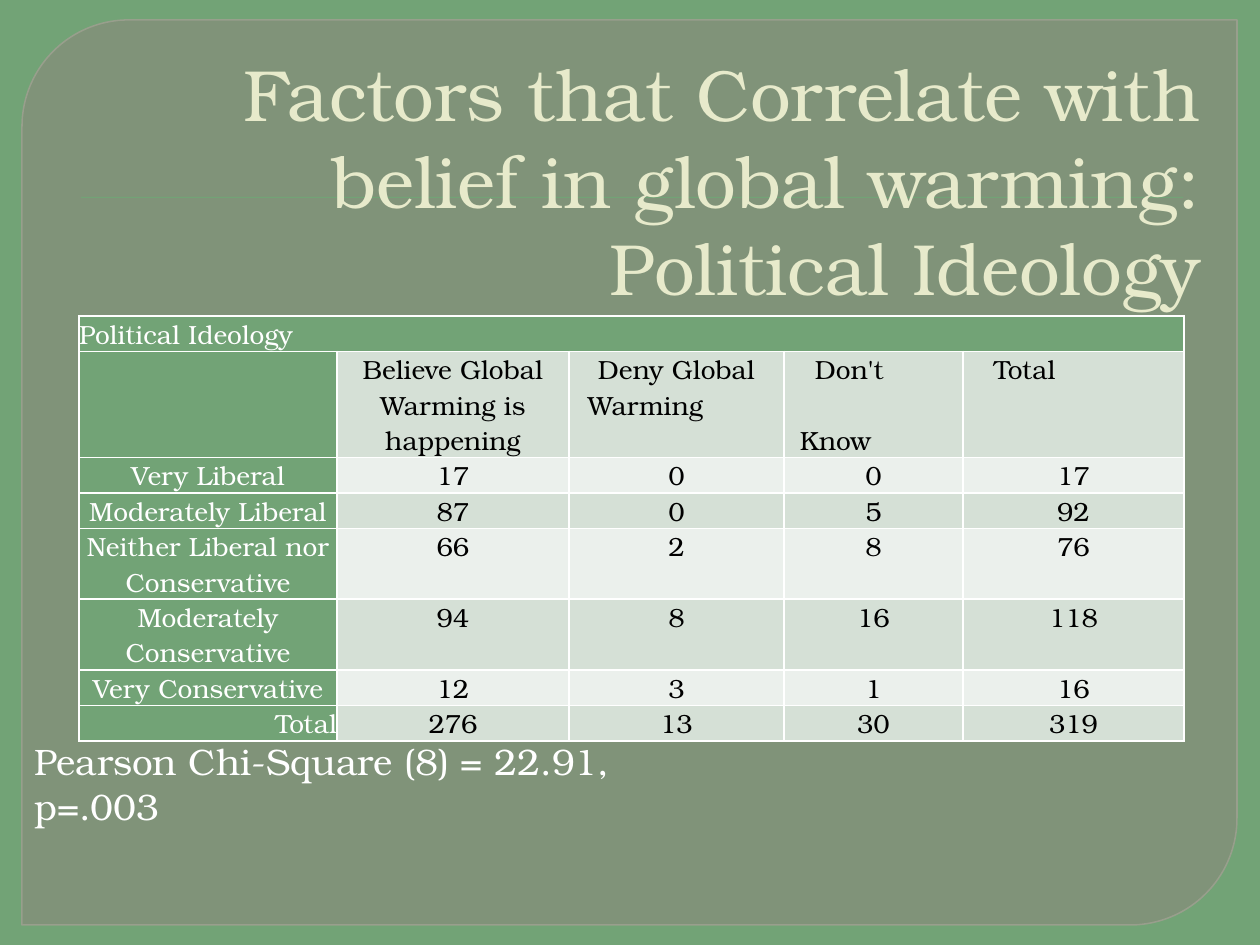
from lxml import etree
from pptx import Presentation
from pptx.dml.color import RGBColor
from pptx.enum.shapes import MSO_SHAPE
from pptx.enum.text import MSO_ANCHOR, MSO_AUTO_SIZE, PP_ALIGN
from pptx.oxml.ns import qn
from pptx.util import Emu, Pt

DIAGONAL_ROUND, RECTANGLE = MSO_SHAPE.ROUND_2_DIAG_RECTANGLE, MSO_SHAPE.RECTANGLE
LEFT, CENTER, RIGHT = PP_ALIGN.LEFT, PP_ALIGN.CENTER, PP_ALIGN.RIGHT
BOTTOM, MIDDLE = MSO_ANCHOR.BOTTOM, MSO_ANCHOR.MIDDLE
NO_FIT, GROW = MSO_AUTO_SIZE.NONE, MSO_AUTO_SIZE.SHAPE_TO_FIT_TEXT

GREEN, WHITE, BLACK = "72A376", "FFFFFF", "000000"
BANDS = "D5E0D6", "EBF0EC"
LINE_PT = 20.2
COLUMN_WIDTHS = 258, 232, 215, 179, 221
ROW_LINES = 1, 3, 1, 1, 2, 2, 1, 1
ROW_UNIT = 32
HEADINGS = [
    [("Believe Global Warming is happening", CENTER, 0, 0)],
    [("Deny Global Warming", LEFT, 19, 10)],
    [("Don't", LEFT, 31, 0), ("Know", LEFT, 16, 0)],
    [("Total", LEFT, 31, 0)],
]
COUNTS = [
    ("Very Liberal", 17, 0, 0, 17),
    ("Moderately Liberal", 87, 0, 5, 92),
    ("Neither Liberal nor Conservative", 66, 2, 8, 76),
    ("Moderately Conservative", 94, 8, 16, 118),
    ("Very Conservative", 12, 3, 1, 16),
    ("Total", 276, 13, 30, 319),
]


def px(length):
    return Emu(round(length * 914400 / 126))


def rgb(code):
    return RGBColor.from_string(code)


class SlideBuilder:
    """Holds the style and the current slide, and adds each kind of element."""

    font = "TeX Gyre Bonum"

    def __init__(self, deck, background):
        self.slide = deck.slides.add_slide(deck.slide_layouts[5])
        fill = self.slide.background.fill
        fill.solid()
        fill.fore_color.rgb = rgb(background)

    def style(self, paragraph, size, color, align):
        paragraph.alignment = align
        paragraph.font.name = self.font
        paragraph.font.size = Pt(size)
        paragraph.font.color.rgb = rgb(color)

    def set_alpha(self, parent, percent):
        color = next(parent.iter(qn("a:srgbClr")))
        etree.SubElement(color, qn("a:alpha"), val=str(percent * 1000))

    def shape(self, kind, box, color):
        shape = self.slide.shapes.add_shape(kind, *map(px, box))
        shape.shadow.inherit = False
        shape.fill.solid()
        shape.fill.fore_color.rgb = rgb(color)
        shape.line.fill.background()
        return shape

    def panel(self, box, color, outline):
        panel = self.shape(DIAGONAL_ROUND, box, color)
        panel.adjustments[0] = 0.118
        panel.adjustments[1] = 0
        panel.line.color.rgb = rgb(outline)
        panel.line.width = Pt(0.87)
        properties = panel.element.spPr
        self.set_alpha(properties.find(qn("a:solidFill")), 65)
        self.set_alpha(properties.find(qn("a:ln")), 88)

    def title(self, text, box, size, color):
        title = self.slide.shapes.title
        title.element.getparent().append(title.element)
        title.left, title.top, title.width, title.height = map(px, box)
        frame = title.text_frame
        frame.text = text
        frame.word_wrap = True
        frame.auto_size = NO_FIT
        frame.vertical_anchor = BOTTOM
        self.style(frame.paragraphs[0], size, color, RIGHT)

    def text(self, text, box, size, color):
        frame = self.slide.shapes.add_textbox(*map(px, box)).text_frame
        frame.text = text
        frame.word_wrap = True
        frame.auto_size = GROW
        self.style(frame.paragraphs[0], size, color, LEFT)

    def table(self, left, top, widths, heights):
        frame = self.slide.shapes.add_table(
            len(heights), len(widths), px(left), px(top), px(sum(widths)), px(sum(heights)))
        table = frame.table
        for column, width in zip(table.columns, widths):
            column.width = px(width)
        for row, height in zip(table.rows, heights):
            row.height = px(height)
        return table

    def cell(self, cell, lines, fill, color):
        cell.margin_left = cell.margin_top = cell.margin_right = cell.margin_bottom = 0
        cell.text = "\n".join(line[0] for line in lines)
        for paragraph, (_, align, margin, indent) in zip(cell.text_frame.paragraphs, lines):
            self.style(paragraph, 15, color, align)
            paragraph.line_spacing = Pt(LINE_PT)
            if margin:
                properties = paragraph._p.get_or_add_pPr()
                properties.set("marL", str(px(margin)))
                properties.set("indent", str(px(indent)))
        properties = cell._tc.get_or_add_tcPr()
        for side in ("a:lnL", "a:lnR", "a:lnT", "a:lnB"):
            border = etree.SubElement(properties, qn(side), w=str(Pt(1)))
            solid = etree.SubElement(border, qn("a:solidFill"))
            etree.SubElement(solid, qn("a:srgbClr"), val=WHITE)
        cell.fill.solid()
        cell.fill.fore_color.rgb = rgb(fill)


def add_ideology_table(builder):
    table = builder.table(79, 316, COLUMN_WIDTHS, [n * ROW_UNIT for n in ROW_LINES])
    body = [[[]] + HEADINGS]
    for label, *counts in COUNTS:
        label_align = RIGHT if label == "Total" else CENTER
        body.append([[(label, label_align, 0, 0)]]
                    + [[(str(count), CENTER, 0, 0)] for count in counts])
    caption = [[("Political Ideology", LEFT, 0, 0)]] + [[]] * 4
    for r, row in enumerate([caption] + body):
        for c, lines in enumerate(row):
            is_header = r == 0 or c == 0
            fill = GREEN if is_header else BANDS[(r + 1) % 2]
            builder.cell(table.cell(r, c), lines, fill, WHITE if is_header else BLACK)
    table.cell(0, 0).merge(table.cell(0, 4))
    table.cell(0, 0).vertical_anchor = MIDDLE
    for second_line in table.cell(1, 3).text_frame.paragraphs[1:]:
        second_line.space_before = Pt(LINE_PT)


def main():
    deck = Presentation()
    deck.slide_width, deck.slide_height = px(1260), px(945)
    builder = SlideBuilder(deck, GREEN)
    builder.panel((22, 20, 1215, 905), "888B7B", "9DA090")
    builder.shape(RECTANGLE, (81, 197, 1102, 1), GREEN)
    builder.title("Factors that Correlate with belief in global warming: Political Ideology",
                  (49, 160, 1164, 156), 41.4, "E7EACB")
    add_ideology_table(builder)
    builder.text("Pearson Chi-Square (8) = 22.91, p=.003", (22, 733, 717, 57), 21, WHITE)
    deck.save("out.pptx")


if __name__ == "__main__":
    main()
